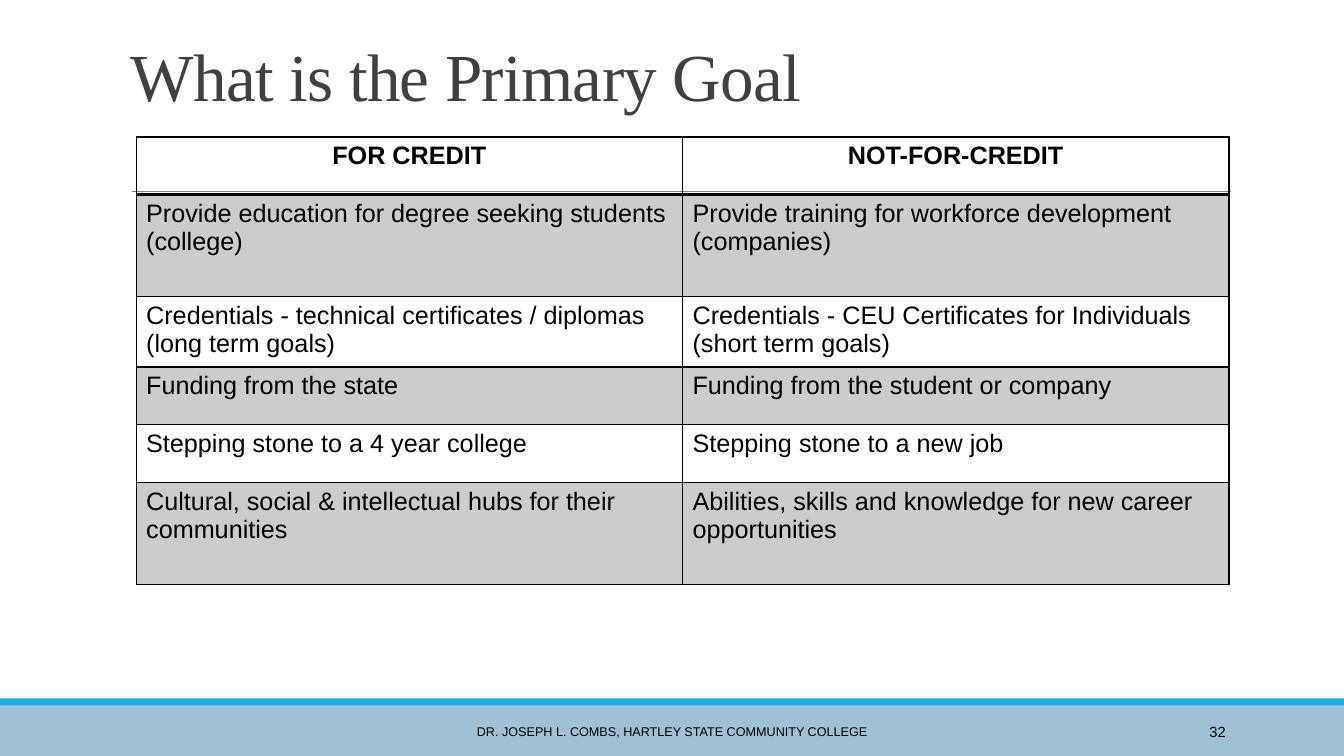
"""Build a slide comparing the primary goals of for-credit and not-for-credit education."""
from dataclasses import dataclass

import lxml.etree
import pptx
import pptx.dml.color
import pptx.enum.shapes
import pptx.enum.text
import pptx.oxml
import pptx.oxml.ns
import pptx.util

Cm = pptx.util.Cm
Pt = pptx.util.Pt
RGBColor = pptx.dml.color.RGBColor
Align = pptx.enum.text.PP_ALIGN
Anchor = pptx.enum.text.MSO_ANCHOR
qn = pptx.oxml.ns.qn


@dataclass(frozen=True)
class Theme:
    heading_font: str = "Times New Roman"
    body_font: str = "Arial"
    ink: str = "000000"
    title_color: str = "404040"
    rule_color: str = "808080"
    band_color: str = "A0C1D5"
    stripe_color: str = "1CADE4"
    title_size: float = 48
    table_size: float = 18
    footer_size: float = 9
    number_size: float = 10.5
    shade_percent: int = 20


theme = Theme()


def style_paragraph(paragraph, text, font_name, size, color, alignment):
    paragraph.text = text
    paragraph.alignment = alignment
    paragraph.font.name = font_name
    paragraph.font.size = Pt(size)
    paragraph.font.color.rgb = RGBColor.from_string(color)


def add_text(box, anchor, *style):
    shape = slide.shapes.add_textbox(*[Cm(length) for length in box])
    shape.text_frame.word_wrap = True
    shape.text_frame.vertical_anchor = anchor
    paragraph = shape.text_frame.paragraphs[0]
    style_paragraph(paragraph, *style)
    return paragraph


presentation = pptx.Presentation()
presentation.slide_width = Cm(33.87)
presentation.slide_height = Cm(19.05)
slide = presentation.slides.add_slide(presentation.slide_layouts[6])

for top, height, color in [(17.78, 1.27, theme.band_color), (17.6, 0.18, theme.stripe_color)]:
    band = slide.shapes.add_shape(
        pptx.enum.shapes.MSO_SHAPE.RECTANGLE, 0, Cm(top), presentation.slide_width, Cm(height))
    band.shadow.inherit = False
    band.fill.solid()
    band.fill.fore_color.rgb = RGBColor.from_string(color)
    band.line.fill.background()

rule = slide.shapes.add_connector(
    pptx.enum.shapes.MSO_CONNECTOR.STRAIGHT, Cm(3.33), Cm(4.83), Cm(31.01), Cm(4.83))
rule.line.color.rgb = RGBColor.from_string(theme.rule_color)
rule.line.width = Pt(0.5)
lxml.etree.SubElement(rule._element.spPr, qn("a:effectLst"))

title = add_text((3.05, 0.79, 27.94, 2.24), Anchor.BOTTOM, "What is the Primary Goal",
                 theme.heading_font, theme.title_size, theme.title_color, Align.LEFT)
title.line_spacing = 0.85
title.runs[0]._r.get_or_add_rPr().set("spc", "-50")

add_text((10.24, 17.93, 13.39, 1.02), Anchor.MIDDLE,
         "DR. JOSEPH L. COMBS, HARTLEY STATE COMMUNITY COLLEGE",
         theme.body_font, theme.footer_size, theme.ink, Align.CENTER)
add_text((27.51, 17.93, 3.63, 1.02), Anchor.MIDDLE, "32",
         theme.body_font, theme.number_size, theme.ink, Align.RIGHT)

goals = [
    ("FOR CREDIT", "NOT-FOR-CREDIT"),
    ("Provide education for degree seeking students (college)",
     "Provide training for workforce development (companies)"),
    ("Credentials - technical certificates / diplomas (long term goals)",
     "Credentials - CEU Certificates for Individuals (short term goals)"),
    ("Funding from the state", "Funding from the student or company"),
    ("Stepping stone to a 4 year college", "Stepping stone to a new job"),
    ("Cultural, social & intellectual hubs for their communities",
     "Abilities, skills and knowledge for new career opportunities"),
]
row_heights = [1.45, 2.57, 1.45, 1.45, 1.45, 2.57]

table = slide.shapes.add_table(
    len(goals), 2, Cm(3.43), Cm(3.45), Cm(27.54), Cm(sum(row_heights))).table
table.first_row = False
table.horz_banding = False
for column in table.columns:
    column.width = Cm(13.77)

for row_index, (goal_pair, height) in enumerate(zip(goals, row_heights)):
    table.rows[row_index].height = Cm(height)
    is_header = row_index == 0
    for column_index, goal in enumerate(goal_pair):
        cell = table.cell(row_index, column_index)
        paragraph = cell.text_frame.paragraphs[0]
        style_paragraph(paragraph, goal, theme.body_font, theme.table_size, theme.ink,
                        Align.CENTER if is_header else Align.LEFT)
        paragraph.font.bold = is_header

        properties = cell._tc.get_or_add_tcPr()
        for side in "LRTB":
            below_header = (is_header and side == "B") or (row_index == 1 and side == "T")
            border = lxml.etree.SubElement(
                properties, qn(f"a:ln{side}"), w=str(Pt(2 if below_header else 1)))
            border_fill = lxml.etree.SubElement(border, qn("a:solidFill"))
            lxml.etree.SubElement(border_fill, qn("a:srgbClr"), val=theme.ink)

        if row_index % 2:
            cell.fill.solid()
            cell.fill.fore_color.rgb = RGBColor.from_string(theme.ink)
            shade = properties.find(qn("a:solidFill")).find(qn("a:srgbClr"))
            lxml.etree.SubElement(shade, qn("a:alpha"), val=str(theme.shade_percent * 1000))
        else:
            cell.fill.background()

presentation.save("out.pptx")
